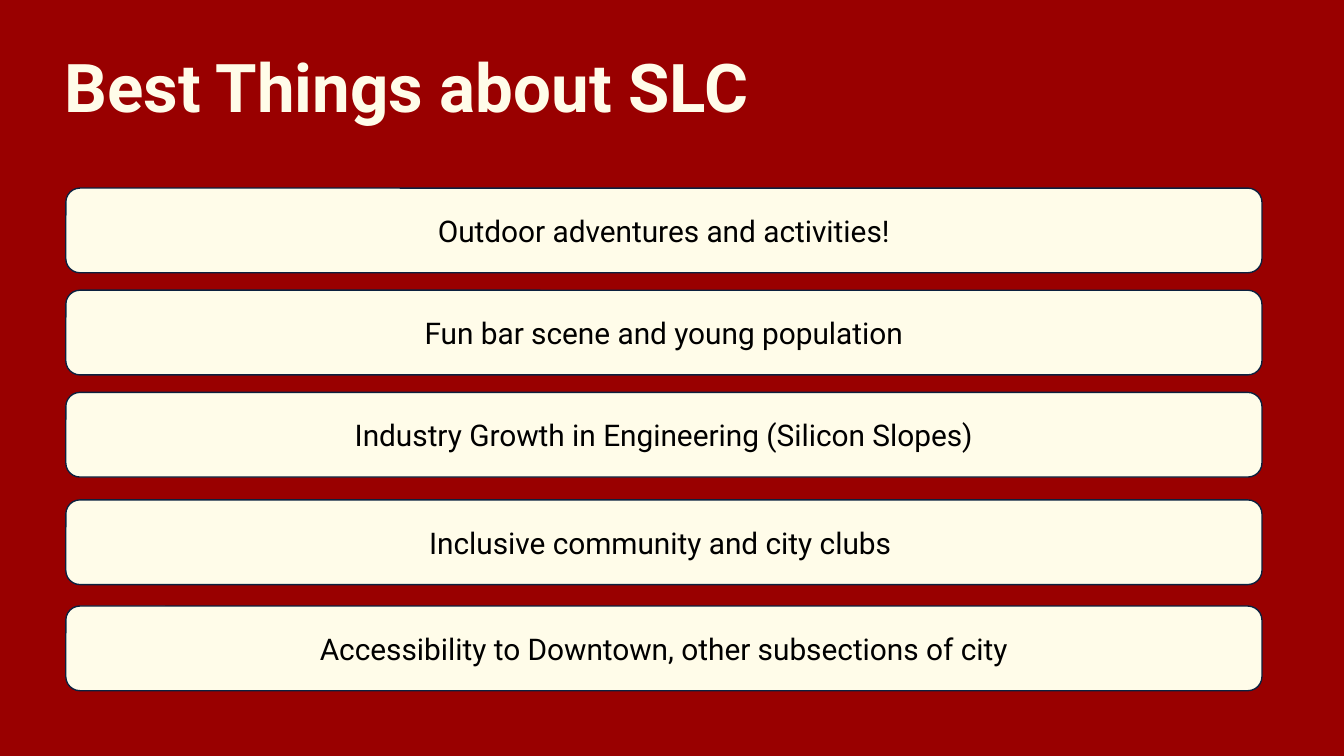
import pptx
import pptx.dml.color
import pptx.enum.shapes
import pptx.enum.text
import pptx.util

Inches, Pt = pptx.util.Inches, pptx.util.Pt
ALIGN = pptx.enum.text.PP_ALIGN
ANCHOR = pptx.enum.text.MSO_ANCHOR

# Content
TITLE = "Best Things about SLC"
# Each bar: top in inches, text
BARS = [
    (1.40, "Outdoor adventures and activities!"),
    (2.16, "Fun bar scene and young population"),
    (2.92, "Industry Growth in Engineering (Silicon Slopes)"),
    (3.72, "Inclusive community and city clubs "),
    (4.51, "Accessibility to Downtown, other subsections of city"),
]
COLORS = {"red": "990000", "cream": "FFFCE9", "navy": "0B213F", "black": "000000"}
FONT = "Roboto"
LEFT, WIDTH, HEIGHT = 0.49, 8.9, 0.63


def paint(fill, name):
    fill.solid()
    fill.fore_color.rgb = pptx.dml.color.RGBColor.from_string(COLORS[name])


def write(shape, text, size, color, align, anchor, bold=False):
    frame = shape.text_frame
    frame.text = text
    frame.word_wrap = True
    frame.auto_size = pptx.enum.text.MSO_AUTO_SIZE.NONE
    frame.vertical_anchor = anchor
    frame.margin_left = frame.margin_right = Inches(0.1)
    frame.margin_top = frame.margin_bottom = Inches(0.1)
    line = frame.paragraphs[0]
    line.alignment = align
    line.line_spacing = 1.0
    line.space_before = Pt(0)
    font = line.runs[0].font
    font.name, font.size, font.bold = FONT, Pt(size), bold
    paint(font.fill, color)


# Slide, 16 to 9
deck = pptx.Presentation()
deck.slide_width = Inches(10)
deck.slide_height = Inches(10) * 9 // 16
slide = deck.slides.add_slide(deck.slide_layouts[5])
paint(slide.background.fill, "red")

# Title
title = slide.shapes.title
title.left, title.top = Inches(0.38), Inches(0.24)
title.width, title.height = Inches(7.51), Inches(0.8)
write(title, TITLE, 36, "cream", ALIGN.LEFT, ANCHOR.TOP, bold=True)

# Bars
for top, text in BARS:
    bar = slide.shapes.add_shape(
        pptx.enum.shapes.MSO_SHAPE.ROUNDED_RECTANGLE,
        Inches(LEFT), Inches(top), Inches(WIDTH), Inches(HEIGHT))
    bar.shadow.inherit = False
    paint(bar.fill, "cream")
    paint(bar.line.fill, "navy")
    bar.line.width = Pt(0.75)
    write(bar, text, 16, "black", ALIGN.CENTER, ANCHOR.MIDDLE)

deck.save("out.pptx")
